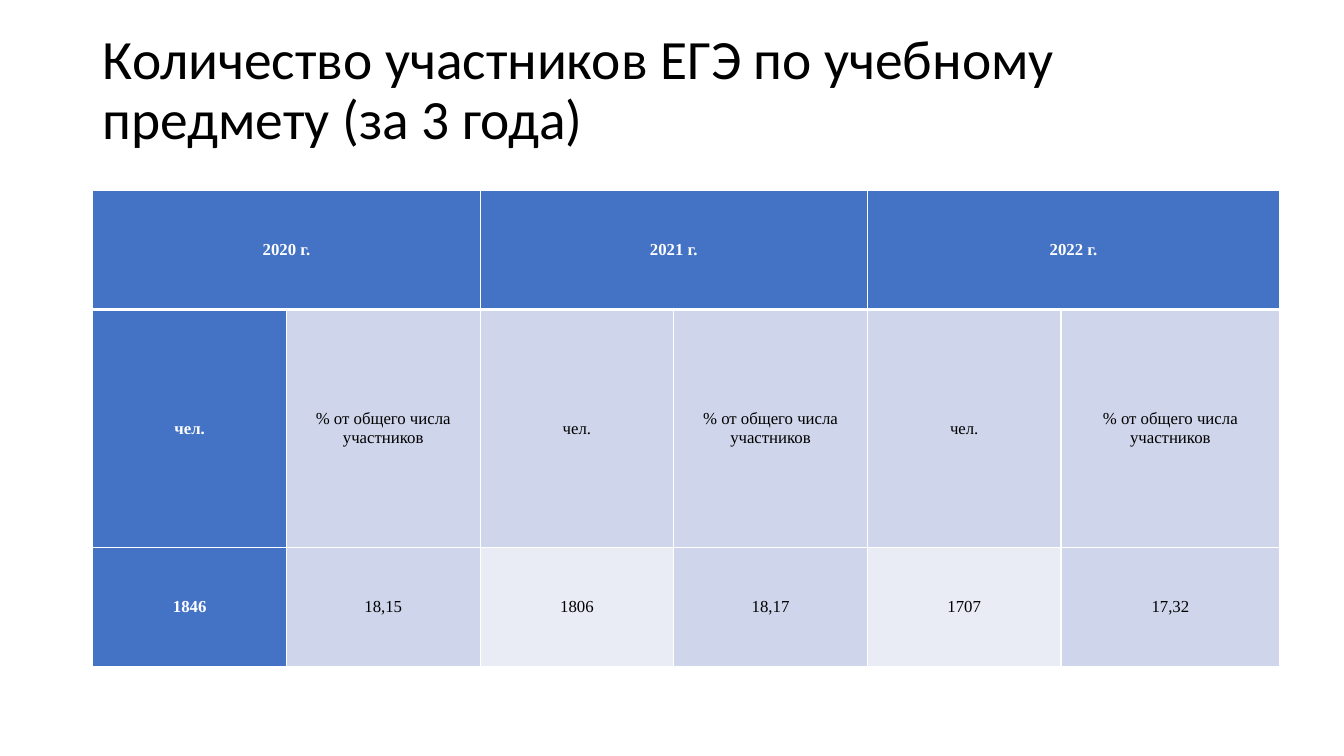
from lxml import etree
from pptx import Presentation
from pptx.dml.color import RGBColor
from pptx.enum.text import MSO_ANCHOR, MSO_AUTO_SIZE, PP_ALIGN
from pptx.oxml.ns import qn
from pptx.util import Cm, Pt

MIDDLE = MSO_ANCHOR.MIDDLE
CENTER = PP_ALIGN.CENTER
FIXED = MSO_AUTO_SIZE.NONE

COLORS = {
    "white": "FFFFFF",
    "black": "000000",
    "head": "4472C4",
    "band": "CFD5EA",
    "pale": "E9EBF5",
}
TITLE = "Количество участников ЕГЭ по учебному предмету (за 3 года)"
YEARS = ["2020 г.", "2021 г.", "2022 г."]
UNITS = ["чел.", "% от общего числа участников"] * len(YEARS)
COUNTS = ["1846", "18,15", "1806", "18,17", "1707", "17,32"]
COLS = [4.88] * 5 + [5.51]
ROWS = [3, 6, 3]
FRAME = {
    "word_wrap": True,
    "auto_size": FIXED,
    "vertical_anchor": MIDDLE,
    "margin_bottom": Cm(1.66),
}
CELL = {
    "vertical_anchor": MIDDLE,
    "margin_left": Cm(0.18),
    "margin_right": Cm(0.18),
    "margin_top": 0,
    "margin_bottom": 0,
}


def rgb(name):
    return RGBColor.from_string(COLORS[name])


def apply(item, values):
    for key, value in values.items():
        setattr(item, key, value)


def write(par, text, size, face, color, bold=False):
    run = par.add_run()
    run.text = text
    apply(run.font, {"size": Pt(size), "name": face, "bold": bold})
    run.font.color.rgb = rgb(color)


def add_title(slide, left, top, width, height):
    box = slide.shapes.add_textbox(Cm(left), Cm(top), Cm(width), Cm(height))
    apply(box.text_frame, FRAME)
    par = box.text_frame.paragraphs[0]
    par.line_spacing = 0.9
    write(par, TITLE, 39.6, "Calibri", "black")


def add_edges(cell, row):
    props = cell._tc.get_or_add_tcPr()
    thick = {0: "lnB", 1: "lnT"}.get(row)
    for side in ("lnL", "lnR", "lnT", "lnB"):
        width = Pt(3 if side == thick else 1)
        line = etree.SubElement(props, qn("a:" + side), w=str(width))
        fill = etree.SubElement(line, qn("a:solidFill"))
        etree.SubElement(fill, qn("a:srgbClr"), val=COLORS["white"])


def pick_fill(row, col):
    if row == 0 or col == 0:
        return "head"
    return "pale" if row == 2 and col % 2 == 0 else "band"


def style_cell(cell, row, col, text):
    fill = pick_fill(row, col)
    apply(cell, CELL)
    add_edges(cell, row)
    cell.fill.solid()
    cell.fill.fore_color.rgb = rgb(fill)
    if text:
        par = cell.text_frame.paragraphs[0]
        par.alignment = CENTER
        head = fill == "head"
        color = "white" if head else "black"
        write(par, text, 12, "Times New Roman", color, head)


def add_counts(slide, left, top):
    frame = slide.shapes.add_table(
        len(ROWS), len(COLS), Cm(left), Cm(top), Cm(sum(COLS)), Cm(sum(ROWS))
    )
    table = frame.table
    table.first_col = True
    for col, width in zip(table.columns, COLS):
        col.width = Cm(width)
    for row, height in zip(table.rows, ROWS):
        row.height = Cm(height)
    heads = [text for year in YEARS for text in (year, "")]
    for r, texts in enumerate([heads, UNITS, COUNTS]):
        for c, text in enumerate(texts):
            style_cell(table.cell(r, c), r, c, text)
    for c in range(0, len(COLS), 2):
        table.cell(0, c).merge(table.cell(0, c + 1))


def main():
    deck = Presentation()
    apply(deck, {"slide_width": Cm(33.87), "slide_height": Cm(19.05)})
    slide = deck.slides.add_slide(deck.slide_layouts[6])
    add_title(slide, 2.34, 1.02, 29.21, 4.11)
    add_counts(slide, 2.34, 4.8)
    deck.save("out.pptx")


if __name__ == "__main__":
    main()
